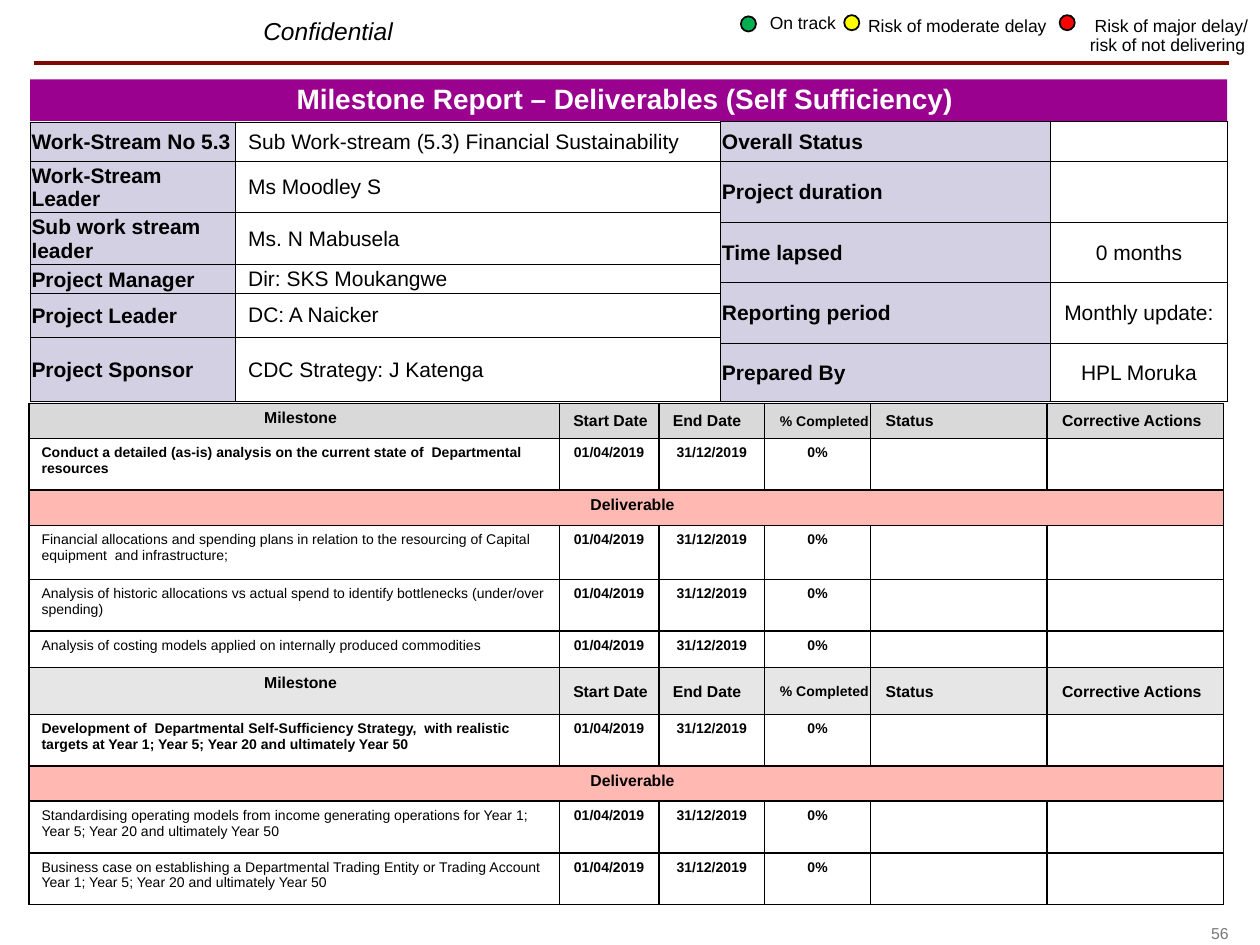
from lxml.etree import SubElement
from pptx import Presentation
from pptx.dml.color import RGBColor
from pptx.enum.shapes import MSO_CONNECTOR, MSO_SHAPE
from pptx.enum.text import MSO_ANCHOR, PP_ALIGN
from pptx.oxml.ns import qn
from pptx.util import Inches, Pt

WIDTH, HEIGHT = 10, 7.5
BLACK, WHITE = "000000", "FFFFFF"
LABEL_FILL, DELIVERABLE_FILL = "D2D0E2", "FFB8B2"
TIGHT = (0.01, 0.01, 0.01, 0)
LOOSE = (0.1, 0.05, 0.1, 0.05)
NONE = (0, 0, 0, 0)
BOX = (0.08, 0.08, 0.08, 0.08)
LEFT, CENTER, RIGHT = PP_ALIGN.LEFT, PP_ALIGN.CENTER, PP_ALIGN.RIGHT
TOP, MIDDLE = MSO_ANCHOR.TOP, MSO_ANCHOR.MIDDLE


def x(percent):
    return Inches(WIDTH * percent / 100)


def y(percent):
    return Inches(HEIGHT * percent / 100)


def color(hex_value):
    return RGBColor.from_string(hex_value)


def set_margins(holder, margins):
    (holder.margin_left, holder.margin_top,
     holder.margin_right, holder.margin_bottom) = map(Inches, margins)


def write(frame, text, size, bold=False, italic=False, ink=BLACK,
          align=LEFT, spacing=None, indent=0):
    frame.text = text
    paragraph = frame.paragraphs[0]
    paragraph.alignment = align
    if spacing:
        paragraph.line_spacing = spacing
    if indent:
        properties = paragraph._p.get_or_add_pPr()
        properties.set("marL", str(Inches(indent)))
        properties.set("indent", "0")
    for run in paragraph.runs:
        font = run.font
        font.name, font.size = "Arial", Pt(size)
        font.bold, font.italic = bold, italic
        font.color.rgb = color(ink)
    if not text:  # keeps an empty cell from stretching its row
        SubElement(paragraph._p, qn("a:endParaRPr"), sz=str(size * 100))


def add_label(slide, left, top, width, height, text, size,
              margins=BOX, anchor=TOP, **style):
    frame = slide.shapes.add_textbox(x(left), y(top), x(width), y(height)).text_frame
    frame.word_wrap = True
    frame.vertical_anchor = anchor
    set_margins(frame, margins)
    write(frame, text, size, **style)


def add_filled(slide, kind, left, top, width, height, fill, outline=None):
    shape = slide.shapes.add_shape(kind, x(left), y(top), x(width), y(height))
    shape.shadow.inherit = False
    shape.fill.solid()
    shape.fill.fore_color.rgb = color(fill)
    if outline:
        shape.line.color.rgb = color(outline)
        shape.line.width = Pt(1)
    else:
        shape.line.fill.background()
    return shape


def add_grid(slide, left, top, columns, rows):
    table = slide.shapes.add_table(len(rows), len(columns), x(left), y(top),
                                   x(sum(columns)), y(sum(rows))).table
    table.first_row = table.horz_banding = False
    for column, width in zip(table.columns, columns):
        column.width = x(width)
    for row, height in zip(table.rows, rows):
        row.height = y(height)
    return table


def fill_cell(cell, text, size, fill=None, border=1, margins=LOOSE, anchor=TOP, **style):
    set_margins(cell, margins)
    cell.vertical_anchor = anchor
    write(cell.text_frame, text, size, **style)
    properties = cell._tc.get_or_add_tcPr()
    for side in ("a:lnL", "a:lnR", "a:lnT", "a:lnB"):
        edge = SubElement(properties, qn(side), w=str(Pt(border)))
        SubElement(SubElement(edge, qn("a:solidFill")), qn("a:srgbClr"), val=BLACK)
    if fill:
        cell.fill.solid()
        cell.fill.fore_color.rgb = color(fill)
    else:
        cell.fill.background()


def add_facts(slide, left, top, columns, rows, facts, **value_style):
    table = add_grid(slide, left, top, columns, rows)
    for row, (label, value) in enumerate(facts):
        fill_cell(table.cell(row, 0), label, 12, LABEL_FILL, 0.5, TIGHT, MIDDLE, bold=True)
        fill_cell(table.cell(row, 1), value, 12, border=0.5, anchor=MIDDLE, **value_style)


def fill_heading(cells, fill):
    fill_cell(cells[0], "Milestone", 9, fill, bold=True, align=CENTER, indent=0.1)
    headings = ["Start Date", "End Date", "% Completed", "Status", "Corrective Actions"]
    for cell, heading in zip(cells[1:], headings):
        size = 8 if heading == "% Completed" else 9
        left = 0.01 if heading.endswith("Date") else 0.02
        fill_cell(cell, heading, size, fill, margins=(left, 0.01, 0.01, 0),
                  anchor=MIDDLE, bold=True, indent=0.1)


def fill_task(cells, task, bold):
    fill_cell(cells[0], task, 8, bold=bold)
    for cell, value in zip(cells[1:], ["01/04/2019", "31/12/2019", "0%", "", ""]):
        fill_cell(cell, value, 8, bold=True, align=CENTER)


def fill_divider(cells):
    cells[0].merge(cells[-1])
    fill_cell(cells[0], "Deliverable", 9, DELIVERABLE_FILL, bold=True,
              align=CENTER, indent=0.1)


def add_milestones(slide, milestones):
    rows = [3.73, 5.47, 3.73, 5.73, 5.47, 3.87, 4.93, 5.47, 3.73, 5.47, 5.47]
    table = add_grid(slide, 2.3, 42.67, [42.1, 7.9, 8.4, 8.4, 14, 14], rows)
    table_rows = iter([list(row.cells) for row in table.rows])
    for heading_fill, milestone, deliverables in milestones:
        fill_heading(next(table_rows), heading_fill)
        fill_task(next(table_rows), milestone, True)
        fill_divider(next(table_rows))
        for deliverable in deliverables:
            fill_task(next(table_rows), deliverable, False)


def add_header(slide):
    rule = slide.shapes.add_connector(MSO_CONNECTOR.STRAIGHT, x(2.7), y(6.67), x(97.5), y(6.67))
    rule.line.color.rgb = color("7D0900")
    rule.line.width = Pt(2.25)
    SubElement(rule._element.spPr, qn("a:effectLst"))
    add_label(slide, 20.1, 0.67, 18.4, 5.2, "Confidential", 14, italic=True)

    # Status legend: dot left, dot top, fill, label box, label
    legend = [
        (58.8, 1.73, "00B050", (60.3, 0.53, 7.9, 4.13), "On track"),
        (67, 1.6, "FFFF00", (68.1, 0.8, 16.5, 4.13), "Risk of moderate delay"),
        (84.1, 1.6, "FF0000", (85.7, 0.8, 14.5, 6.13),
         " Risk of major delay/ risk of not delivering"),
    ]
    for left, top, fill, box, label in legend:
        add_filled(slide, MSO_SHAPE.OVAL, left, top, 1.2, 1.6, fill, BLACK)
        add_label(slide, *box, label, 10, spacing=0.9)

    title = add_filled(slide, MSO_SHAPE.RECTANGLE, 2.4, 8.4, 95, 4.4, "99018E")
    title.text_frame.vertical_anchor = MIDDLE
    write(title.text_frame, "Milestone Report – Deliverables (Self Sufficiency) ", 16,
          bold=True, ink=WHITE, align=CENTER, spacing=0.9)


def main():
    deck = Presentation()
    deck.slide_width, deck.slide_height = Inches(WIDTH), Inches(HEIGHT)
    slide = deck.slides.add_slide(deck.slide_layouts[6])
    add_header(slide)

    # Work-stream people
    add_facts(slide, 2.4, 12.93, [16.3, 38.5], [4.13, 5.47, 5.47, 3.07, 4.67, 6.8], [
        ("Work-Stream No 5.3", "Sub Work-stream (5.3) Financial Sustainability"),
        ("Work-Stream Leader", "Ms Moodley S"),
        ("Sub work stream leader", "Ms. N Mabusela"),
        ("Project Manager", "Dir: SKS Moukangwe"),
        ("Project Leader", "DC: A Naicker"),
        ("Project Sponsor", "CDC Strategy: J Katenga"),
    ], margins=NONE, indent=0.1)

    # Reporting status
    add_facts(slide, 57.2, 12.85, [26.2, 14], [4.27, 6.4, 6.4, 6.4, 6.13], [
        ("Overall Status", ""),
        ("Project duration", ""),
        ("Time lapsed", "0 months"),
        ("Reporting period", "Monthly update:"),
        ("Prepared By", "HPL Moruka"),
    ], margins=TIGHT, align=CENTER)

    # Milestones with their deliverables
    add_milestones(slide, [
        ("D9D9D9",
         "Conduct a detailed (as-is) analysis on the current state of  Departmental resources",
         ["Financial allocations and spending plans in relation to the resourcing of "
          "Capital equipment  and infrastructure;",
          "Analysis of historic allocations vs actual spend to identify bottlenecks "
          "(under/over spending)",
          "Analysis of costing models applied on internally produced commodities"]),
        ("E6E6E6",
         "Development of  Departmental Self-Sufficiency Strategy,  with realistic targets "
         "at Year 1; Year 5; Year 20 and ultimately Year 50",
         ["Standardising operating models from income generating operations for Year 1; "
          "Year 5; Year 20 and ultimately Year 50",
          "Business case on establishing a Departmental Trading Entity or Trading Account "
          "Year 1; Year 5; Year 20 and ultimately Year 50"]),
    ])

    # Page number
    add_label(slide, 94.6, 97.73, 2.9, 2, "56", 9, NONE, MIDDLE, ink="77787B", align=RIGHT)
    deck.save("out.pptx")


if __name__ == "__main__":
    main()
